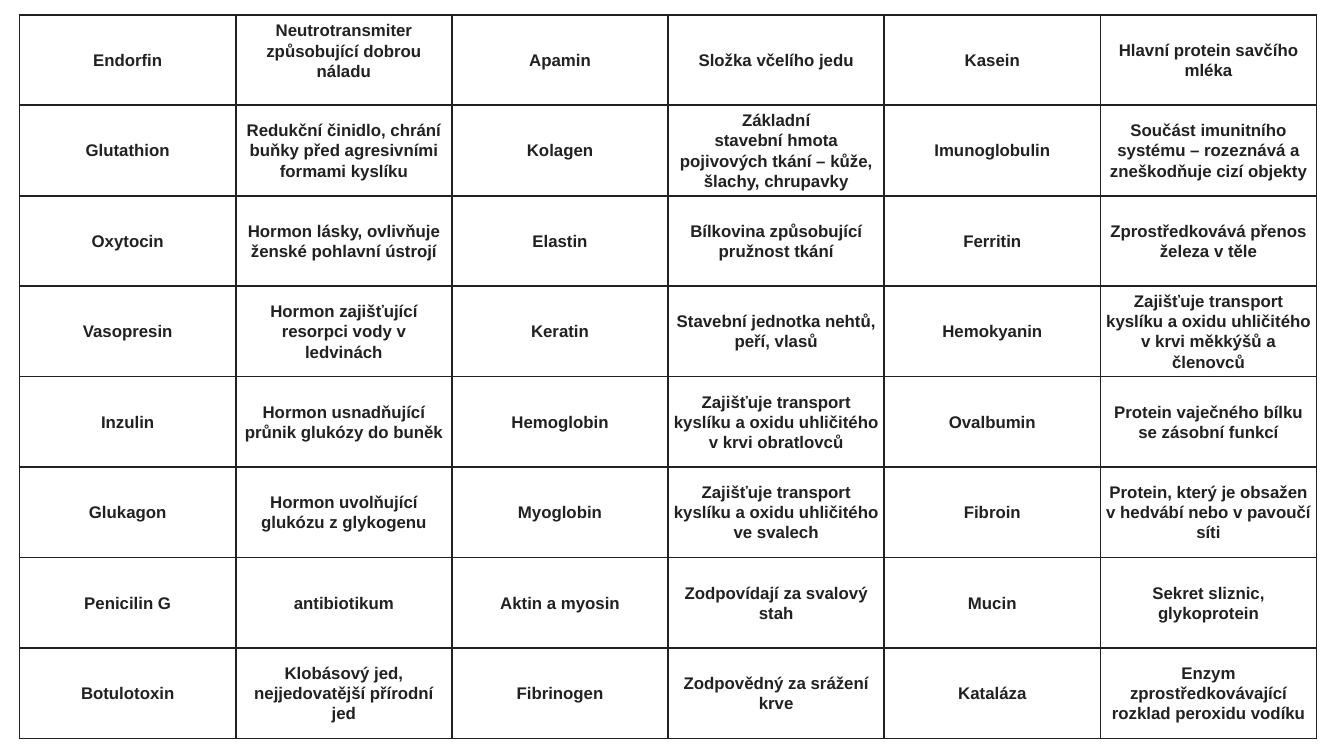
from pptx import Presentation
from pptx.dml.color import RGBColor as RGB
from pptx.enum.text import MSO_ANCHOR as Anchor, PP_ALIGN as Align
from pptx.oxml import parse_xml
from pptx.oxml.ns import nsdecls
from pptx.util import Cm, Pt

HUES = {"ink": "212121", "page": "FFFFFF"}

ROWS = [
    ["Endorfin", "Neutrotransmiter způsobující dobrou náladu\n",
     "Apamin", "Složka včelího jedu",
     "Kasein", "Hlavní protein savčího mléka"],
    ["Glutathion", "Redukční činidlo, chrání buňky před agresivními formami kyslíku",
     "Kolagen", "Základní\nstavební hmota pojivových tkání – kůže, šlachy, chrupavky",
     "Imunoglobulin", "Součást imunitního systému – rozeznává a zneškodňuje cizí objekty"],
    ["Oxytocin", "Hormon lásky, ovlivňuje ženské pohlavní ústrojí",
     "Elastin", "Bílkovina způsobující pružnost tkání",
     "Ferritin", "Zprostředkovává přenos železa v těle"],
    ["Vasopresin", "Hormon zajišťující resorpci vody v ledvinách",
     "Keratin", "Stavební jednotka nehtů, peří, vlasů",
     "Hemokyanin", "Zajišťuje transport kyslíku a oxidu uhličitého v krvi měkkýšů a členovců"],
    ["Inzulin", "Hormon usnadňující průnik glukózy do buněk",
     "Hemoglobin", "Zajišťuje transport kyslíku a oxidu uhličitého v krvi obratlovců",
     "Ovalbumin", "Protein vaječného bílku se zásobní funkcí"],
    ["Glukagon", "Hormon uvolňující glukózu z glykogenu",
     "Myoglobin", "Zajišťuje transport kyslíku a oxidu uhličitého ve svalech",
     "Fibroin", "Protein, který je obsažen v hedvábí nebo v pavoučí síti"],
    ["Penicilin G", "antibiotikum",
     "Aktin a myosin", "Zodpovídají za svalový stah",
     "Mucin", "Sekret sliznic, glykoprotein"],
    ["Botulotoxin", "Klobásový jed, nejjedovatější přírodní jed",
     "Fibrinogen", "Zodpovědný za srážení krve",
     "Kataláza", "Enzym zprostředkovávající rozklad peroxidu vodíku"],
]

deck = Presentation()
deck.slide_width, deck.slide_height = Cm(25.4), Cm(14.29)
slide = deck.slides.add_slide(deck.slide_layouts[6])

table = slide.shapes.add_table(
    len(ROWS), len(ROWS[0]), Cm(0.37), Cm(0.28), Cm(24.51), Cm(13.68)).table
table.first_row = False
table.horz_banding = False

for row, words in zip(table.rows, ROWS):
    for cell, text in zip(row.cells, words):
        cell.fill.solid()
        cell.fill.fore_color.rgb = RGB.from_string(HUES["page"])
        cell.vertical_anchor = Anchor.MIDDLE
        cell.margin_left = cell.margin_right = Cm(0.1)
        cell.margin_top = cell.margin_bottom = Cm(0)

        para = cell.text_frame.paragraphs[0]
        for i, line in enumerate(text.split("\n")):
            if i:
                para.add_line_break()
            if line:
                para.add_run().text = line
        para.alignment = Align.CENTER
        para.line_spacing = 1.07
        para.space_after = Pt(8)
        para.font.name = "Arial"
        para.font.size = Pt(9)
        para.font.bold = True
        para.font.color.rgb = RGB.from_string(HUES["ink"])

        props = cell._tc.get_or_add_tcPr()
        for i, side in enumerate("LRTB"):
            props.insert(i, parse_xml(
                f'<a:ln{side} {nsdecls("a")} w="{Pt(1)}"><a:solidFill>'
                f'<a:srgbClr val="{HUES["ink"]}"/></a:solidFill></a:ln{side}>'))

deck.save("out.pptx")
